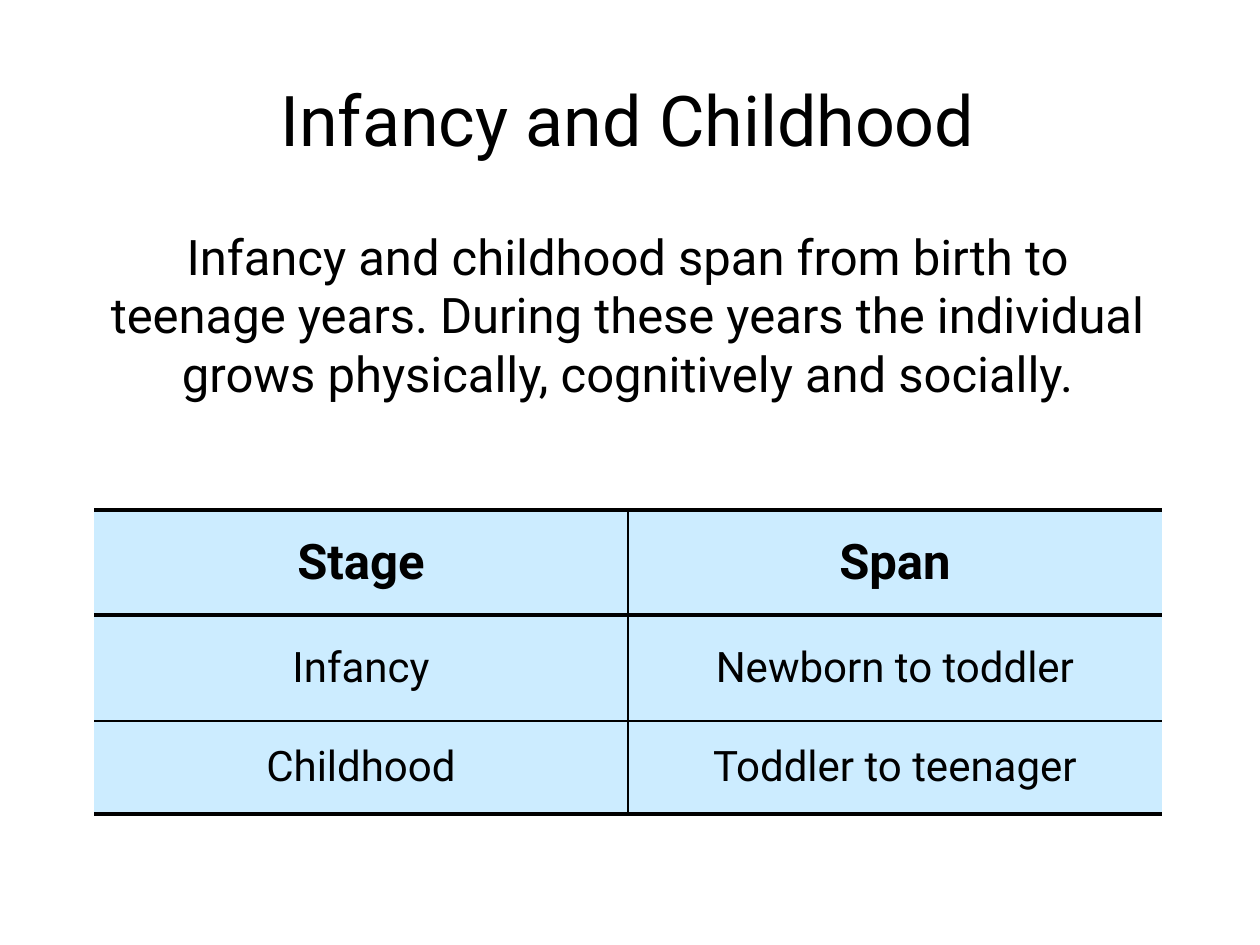
import pptx
import pptx.util
import pptx.dml.color
import pptx.enum.text
import pptx.oxml.ns
from lxml import etree

BLACK = pptx.dml.color.RGBColor(0x00, 0x00, 0x00)
PALE_BLUE = pptx.dml.color.RGBColor(0xCC, 0xEC, 0xFF)
EMU_PER_PX = 914400 / 126
THIN, THICK = 1, 2.25
MIDDLE = pptx.enum.text.MSO_ANCHOR.MIDDLE
TOP = pptx.enum.text.MSO_ANCHOR.TOP


def px(n):
    return pptx.util.Emu(round(n * EMU_PER_PX))


def write_text(tf, text, *, size, font, bold=False, color=BLACK, line_spacing=None):
    p = tf.paragraphs[0]
    p.alignment = pptx.enum.text.PP_ALIGN.CENTER
    if line_spacing:
        p.line_spacing = line_spacing
    r = p.add_run()
    r.text = text
    r.font.name = font
    r.font.size = pptx.util.Pt(size)
    r.font.bold = bold
    r.font.color.rgb = color


def set_borders(cell, **widths):
    """Draw the given sides (L, R, T, B) in points; 0 leaves a side open."""
    qn = pptx.oxml.ns.qn
    tc_pr = cell._tc.get_or_add_tcPr()
    for i, side in enumerate("LRTB"):
        width = widths[side]
        ln = etree.Element(qn(f"a:ln{side}"), w=str(pptx.util.Pt(width)))
        if width:
            fill = etree.SubElement(ln, qn("a:solidFill"))
            etree.SubElement(fill, qn("a:srgbClr"), val=str(BLACK))
        else:
            etree.SubElement(ln, qn("a:noFill"))
        tc_pr.insert(i, ln)


class Deck:
    def __init__(self, width, height, font):
        self.font = font
        self.prs = pptx.Presentation()
        self.prs.slide_width, self.prs.slide_height = px(width), px(height)
        self.s = self.prs.slides.add_slide(self.prs.slide_layouts[6])

    def text(self, x, y, w, h, text, size, anchor=TOP):
        tf = self.s.shapes.add_textbox(px(x), px(y), px(w), px(h)).text_frame
        tf.word_wrap = True
        tf.vertical_anchor = anchor
        write_text(tf, text, size=size, font=self.font)

    def table(self, x, y, col_widths, row_heights, rows, rules):
        """Place a table whose horizontal rules, top to bottom, have the given widths."""
        frame = self.s.shapes.add_table(
            len(rows), len(col_widths), px(x), px(y),
            px(sum(col_widths)), px(sum(row_heights)))
        table = frame.table
        for col, width in zip(table.columns, col_widths):
            col.width = px(width)
        for row, height in zip(table.rows, row_heights):
            row.height = px(height)
        last = len(col_widths) - 1
        for i, row in enumerate(rows):
            header = i == 0
            for j, text in enumerate(row):
                cell = table.cell(i, j)
                cell.fill.solid()
                cell.fill.fore_color.rgb = PALE_BLUE
                cell.vertical_anchor = MIDDLE
                write_text(cell.text_frame, text, font=self.font,
                           size=28 if header else 24, bold=header,
                           line_spacing=0.95 if j and not header else None)
                set_borders(cell, L=THIN if j else 0, R=THIN if j < last else 0,
                            T=rules[i], B=rules[i + 1])


def main():
    deck = Deck(1260, 945, font="Roboto")
    deck.text(92, 40, 1071, 158, "Infancy and Childhood", 40, MIDDLE)
    deck.text(92, 220, 1071, 252,
              "Infancy and childhood span from birth to teenage years. During these "
              "years the individual grows physically, cognitively and socially.", 28)
    deck.table(94, 510, [534, 534], [105, 106, 93],
               [["Stage", "Span"],
                ["Infancy", "Newborn to toddler"],
                ["Childhood", "Toddler to teenager"]],
               rules=[THICK, THICK, THIN, THICK])
    deck.prs.save("out.pptx")


if __name__ == "__main__":
    main()
